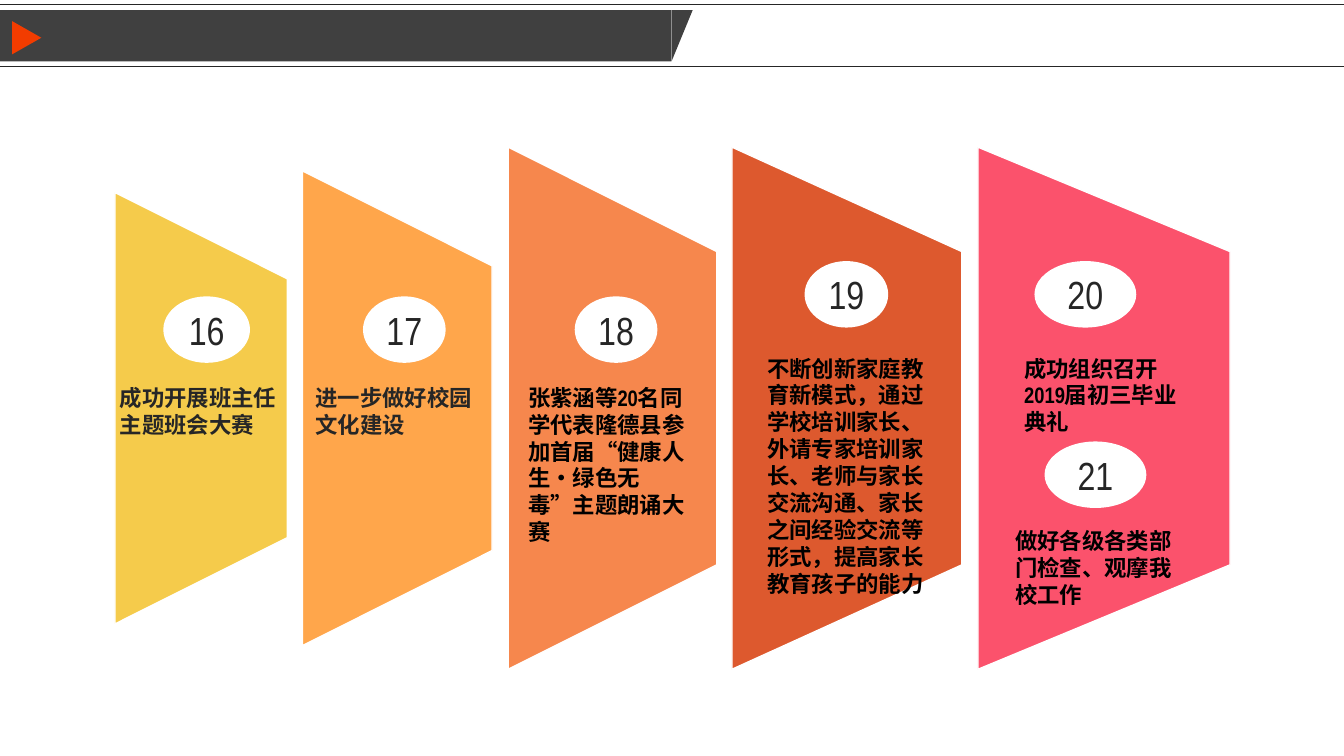
from dataclasses import dataclass

from lxml import etree
from pptx import Presentation
from pptx.dml.color import RGBColor
from pptx.enum.shapes import MSO_CONNECTOR as CONN, MSO_SHAPE as SHAPE
from pptx.enum.text import MSO_ANCHOR as ANCHOR, PP_ALIGN as ALIGN
from pptx.oxml.ns import qn
from pptx.util import Inches, Pt


@dataclass(frozen=True)
class Theme:
    font: str = "Arial Narrow"
    ink: str = "262626"
    black: str = "000000"
    white: str = "FFFFFF"
    bar: str = "404040"
    accent: str = "F23C00"
    body_size: int = 16
    number_size: int = 28
    rule_width: float = 0.5
    panel_opacity: int = 90


THEME = Theme()
SLIDE_W, SLIDE_H = 13.33, 7.5
PANEL_MIDDLE = 4.05
PANEL_SLANT = 0.2  # share of the height cut from each right corner
LABEL_W = 1.78
BADGE_H = 0.66

# left, width, height, colour
PANELS = [
    (1.14, 1.71, 4.28, "F5C638"),
    (3.0, 1.88, 4.71, "FF9D38"),
    (5.04, 2.07, 5.18, "F67A3A"),
    (7.26, 2.28, 5.18, "DA4818"),
    (9.7, 2.5, 5.18, "FB405D"),
]

# number, badge (left, top, width), label (left, top, height), label colour, wording
ITEMS = [
    ("16", (1.62, 2.94, 0.86), (1.09, 3.76, 0.64), THEME.ink,
     "成功开展班主任主题班会大赛"),
    ("17", (3.6, 2.94, 0.82), (3.03, 3.76, 0.64), THEME.ink,
     "进一步做好校园文化建设"),
    ("18", (5.7, 2.94, 0.82), (5.14, 3.76, 1.45), THEME.black,
     "张紫涵等20名同学代表隆德县参加首届“健康人生•绿色无毒”主题朗诵大赛"),
    ("19", (7.98, 2.59, 0.83), (7.51, 3.47, 2.52), THEME.black,
     "不断创新家庭教育新模式，通过学校培训家长、外请专家培训家长、"
     "老师与家长交流沟通、家长之间经验交流等形式，提高家长教育孩子的能力"),
    ("20", (10.26, 2.59, 1.01), (10.06, 3.47, 0.91), THEME.black,
     "成功组织召开2019届初三毕业典礼"),
    ("21", (10.36, 4.38, 1.01), (9.97, 5.18, 0.91), THEME.black,
     "做好各级各类部门检查、观摩我校工作"),
]


def rgb(code):
    return RGBColor.from_string(code)


def paint(sp, color):
    """Give a shape a flat fill with neither outline nor shadow."""
    sp.shadow.inherit = False
    sp.fill.solid()
    sp.fill.fore_color.rgb = rgb(color)
    sp.line.fill.background()


def add_flat(shapes, kind, left, top, width, height, color):
    sp = shapes.add_shape(kind, Inches(left), Inches(top), Inches(width), Inches(height))
    paint(sp, color)
    return sp


def write(tf, text, size, color, bold=False):
    tf.text = text
    p = tf.paragraphs[0]
    font = p.runs[0].font
    font.name, font.size, font.bold = THEME.font, Pt(size), bold
    font.color.rgb = rgb(color)
    return p


def add_rule(shapes, top):
    line = shapes.add_connector(CONN.STRAIGHT, 0, Inches(top), Inches(SLIDE_W), Inches(top))
    line.line.color.rgb = rgb(THEME.ink)
    line.line.width = Pt(THEME.rule_width)
    etree.SubElement(line._element.spPr, qn("a:effectLst"))


def add_header(shapes, top, height):
    """Draw the title bar with its slanted end between two thin rules."""
    for y in (top, top + height):
        add_rule(shapes, y)
    bar_top, bar_w, bar_h = top + 0.06, 6.66, 0.51
    bar = shapes.add_group_shape().shapes
    add_flat(bar, SHAPE.RECTANGLE, 0, bar_top, bar_w, bar_h, THEME.bar)
    end = add_flat(bar, SHAPE.ISOSCELES_TRIANGLE, bar_w, bar_top, 0.21, bar_h, THEME.bar)
    end.adjustments[0] = 1.0
    end.rotation = 180
    marker = add_flat(shapes, SHAPE.ISOSCELES_TRIANGLE, 0.1, top + 0.19, 0.33, 0.29, THEME.accent)
    marker.rotation = 90


def add_panel(shapes, left, width, height, color):
    top, bottom = PANEL_MIDDLE - height / 2, PANEL_MIDDLE + height / 2
    right, cut = left + width, height * PANEL_SLANT
    corners = [(left, bottom), (left, top), (right, top + cut), (right, bottom - cut)]
    start, *rest = [(Inches(x), Inches(y)) for x, y in corners]
    outline = shapes.build_freeform(*start)
    outline.add_line_segments(rest, close=True)
    sp = outline.convert_to_shape()
    paint(sp, color)
    sp.line.color.rgb = rgb(THEME.white)
    sp.line.width = Pt(1)
    clr = sp._element.spPr.find(qn("a:solidFill")).find(qn("a:srgbClr"))
    etree.SubElement(clr, qn("a:alpha"), val=str(THEME.panel_opacity * 1000))


def add_badge(shapes, left, top, width, number):
    sp = add_flat(shapes, SHAPE.OVAL, left, top, width, BADGE_H, THEME.white)
    tf = sp.text_frame
    tf.margin_left = tf.margin_right = tf.margin_top = tf.margin_bottom = 0
    tf.vertical_anchor = ANCHOR.MIDDLE
    write(tf, number, THEME.number_size, THEME.ink).alignment = ALIGN.CENTER


def add_label(shapes, left, top, height, text, color):
    box = shapes.add_textbox(Inches(left), Inches(top), Inches(LABEL_W), Inches(height))
    box.text_frame.word_wrap = True
    write(box.text_frame, text, THEME.body_size, color, bold=True)


def main():
    prs = Presentation()
    prs.slide_width, prs.slide_height = Inches(SLIDE_W), Inches(SLIDE_H)
    shapes = prs.slides.add_slide(prs.slide_layouts[6]).shapes
    add_header(shapes, 0.04, 0.62)
    fan = shapes.add_group_shape().shapes
    for panel in PANELS:
        add_panel(fan, *panel)
    for number, badge, label, color, text in ITEMS:
        add_label(shapes, *label, text, color)
        add_badge(shapes, *badge, number)
    prs.save("out.pptx")


if __name__ == "__main__":
    main()
